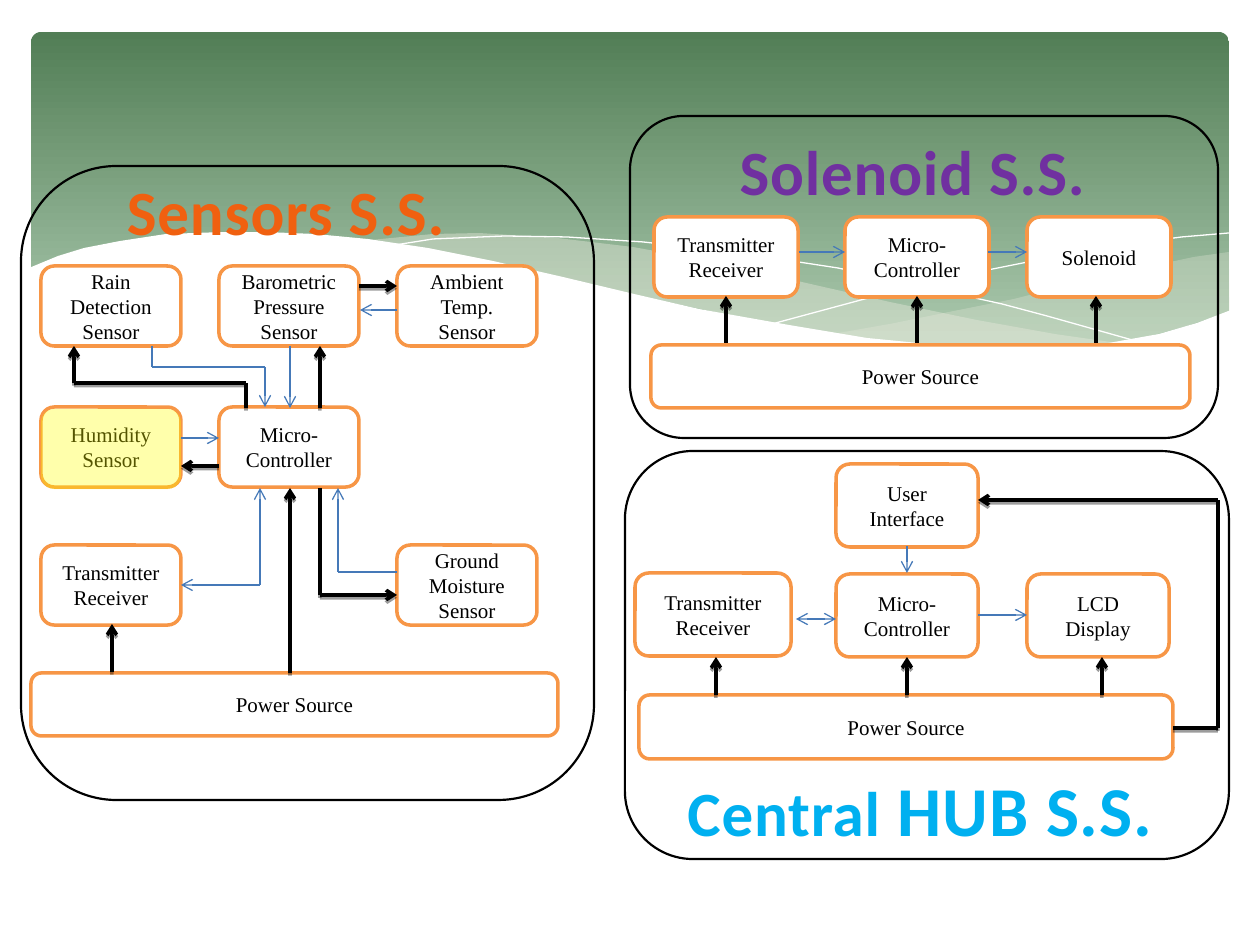
from lxml import etree
from pptx import Presentation
from pptx.dml.color import RGBColor
from pptx.enum.shapes import MSO_CONNECTOR, MSO_SHAPE
from pptx.enum.text import MSO_ANCHOR, PP_ALIGN
from pptx.oxml.ns import qn
from pptx.util import Pt

PX = 914400 / 126
ROUND = MSO_SHAPE.ROUNDED_RECTANGLE
LINE = MSO_CONNECTOR.STRAIGHT
MID = MSO_ANCHOR.MIDDLE
MID_TEXT = PP_ALIGN.CENTER
COLORS = {
    "dark": "527E56", "light": "AAC8AD", "mist": "EAEBDE", "white": "FFFFFF",
    "black": "000000", "edge": "F79646", "wire": "4579B8", "mark": "FFFF00",
    "orange": "F06010", "sky": "00B0F0", "purple": "7030A0",
}
WAVES = [
    ("mist", 29, [
        (1198, 220), (1163, 225), (1111, 236), (1054, 249), (983, 267), (918, 280),
        (859, 292), (802, 302), (840, 307), (875, 311), (923, 316), (981, 318),
        (1032, 317), (1079, 312), (1119, 304), (1156, 294), (1199, 279)]),
    ("mist", 40, [
        (1094, 312), (1024, 302), (946, 288), (859, 270), (762, 248), (705, 234),
        (651, 224), (602, 215), (526, 206), (448, 201), (402, 202), (329, 209),
        (400, 219), (478, 234), (535, 248), (637, 270), (726, 289), (807, 303),
        (879, 313), (958, 318), (1025, 318)]),
    (None, 0, [
        (358, 214), (402, 207), (474, 204), (536, 205), (612, 210), (702, 220),
        (807, 236), (885, 253), (971, 272), (1016, 284), (1112, 311)]),
    (None, 0, [
        (741, 292), (845, 264), (947, 240), (1022, 225), (1097, 212), (1151, 205),
        (1198, 201)]),
    ("white", 100, [
        (1200, 278), (1166, 291), (1128, 302), (1072, 312), (1006, 317), (928, 315),
        (836, 306), (758, 293), (668, 277), (603, 262), (532, 245), (462, 229),
        (397, 216), (337, 207), (284, 202), (235, 200), (192, 200), (135, 202),
        (89, 209), (53, 216), (27, 224), (-2, 236), (-2, 383), (1200, 383)]),
]


def rgb(name):
    """Return the named colour."""
    return RGBColor.from_string(COLORS[name])


def emu(*sizes):
    """Turn px into EMU."""
    return [round(size * PX) for size in sizes]


def paint(shape, fill=None, alpha=100, line=None, width=1):
    """Set the fill, opacity and outline of a shape."""
    shape.shadow.inherit = False
    if fill:
        shape.fill.solid()
        shape.fill.fore_color.rgb = rgb(fill)
        if alpha < 100:
            tone = shape._element.spPr.find(qn("a:solidFill"))[0]
            etree.SubElement(tone, qn("a:alpha")).set("val", str(alpha * 1000))
    else:
        shape.fill.background()
    if line:
        shape.line.color.rgb = rgb(line)
        shape.line.width = Pt(width)
    else:
        shape.line.fill.background()


def style(para, font, size, color):
    """Centre a paragraph and format its runs."""
    para.alignment = MID_TEXT
    for run in para.runs:
        run.font.name = font
        run.font.size = Pt(size)
        run.font.color.rgb = rgb(color)


def add_node(slide, box, at, text, fill="white"):
    """Add a labelled block at a place inside the box."""
    x, y, w, h = at
    node = slide.shapes.add_shape(ROUND, *emu(box[0] + x, box[1] + y, w, h))
    paint(node, fill, line="edge", width=2)
    frame = node.text_frame
    frame.text = text
    frame.word_wrap = True
    frame.vertical_anchor = MID
    style(frame.paragraphs[0], "Times New Roman", 12, "black")


def add_wire(slide, box, points, power=False, both=False):
    """Join points by straight lines that end in an arrow."""
    spots = [(box[0] + x, box[1] + y) for x, y in points]
    last = len(spots) - 2
    for i, (start, end) in enumerate(zip(spots, spots[1:])):
        wire = slide.shapes.add_connector(LINE, *emu(*start, *end))
        wire.line.color.rgb = rgb("black" if power else "wire")
        wire.line.width = Pt(2 if power else 0.75)
        props = wire._element.spPr
        ends = [("a:headEnd", both and i == 0), ("a:tailEnd", i == last)]
        for tag, shown in ends:
            if shown:
                etree.SubElement(props.find(qn("a:ln")), qn(tag)).set("type", "arrow")
        effect = etree.SubElement(props, qn("a:effectLst"))
        if power:
            shade = etree.SubElement(effect, qn("a:outerShdw"), dist="20000",
                                     dir="5400000", rotWithShape="0")
            tone = etree.SubElement(shade, qn("a:srgbClr"), val=COLORS["black"])
            etree.SubElement(tone, qn("a:alpha"), val="38000")


def add_name(slide, box, at, parts, color):
    """Add a panel name from parts of text and size."""
    x, y, w, h = at
    label = slide.shapes.add_textbox(*emu(box[0] + x, box[1] + y, w, h))
    label.text_frame.word_wrap = False
    para = label.text_frame.paragraphs[0]
    for text, _ in parts:
        para.add_run().text = text
    style(para, "Calibri", 36, color)
    for run, (_, size) in zip(para.runs, parts):
        run.font.size = Pt(size)
        run.font.bold = True
        run.font._element.set("spc", "50")


def add_frame(slide, box):
    """Outline a panel."""
    paint(slide.shapes.add_shape(ROUND, *emu(*box)), line="black", width=1.25)


def add_head(slide, box):
    """Draw the green banner and its waves."""
    band = slide.shapes.add_shape(ROUND, *emu(*box))
    paint(band)
    band.adjustments[0] = 0.03
    band.fill.gradient()
    band.fill.gradient_angle = 270
    stops = zip(band.fill.gradient_stops, ("dark", "light"), (0, 0.9))
    for stop, name, place in stops:
        stop.color.rgb = rgb(name)
        stop.position = place
    for fill, alpha, points in WAVES:
        path = slide.shapes.build_freeform(*points[0], scale=PX)
        path.add_line_segments(points[1:], close=bool(fill))
        wave = path.convert_to_shape(*emu(*box[:2]))
        paint(wave, fill, alpha, None if fill else "white", 0)


def add_sensors(slide, box):
    """Draw the sensors panel."""
    cols, rows = (20, 198, 376), (100, 241, 379)
    nodes = [
        (0, 0, "Rain Detection\vSensor"), (1, 0, "Barometric Pressure Sensor"),
        (2, 0, "Ambient Temp.\vSensor"), (0, 1, "Humidity\vSensor"),
        (1, 1, "Micro-Controller"), (0, 2, "Transmitter\vReceiver"),
        (2, 2, "Ground Moisture\vSensor")]
    for col, row, text in nodes:
        add_node(slide, box, (cols[col], rows[row], 140, 80), text)
    add_node(slide, box, (10, 507, 527, 63), "Power Source")
    feeds = [
        [(91, 506), (91, 458)], [(269, 507), (269, 322)], [(198, 300), (160, 300)],
        [(299, 242), (299, 180)], [(299, 322), (299, 429), (376, 429)],
        [(225, 242), (225, 217), (53, 217), (53, 180)], [(338, 120), (376, 120)]]
    for points in feeds:
        add_wire(slide, box, points, power=True)
    links = [
        [(131, 180), (131, 201), (244, 201), (244, 241)], [(269, 180), (269, 242)],
        [(160, 272), (198, 272)], [(376, 406), (317, 406), (317, 322)],
        [(376, 144), (339, 144)]]
    for points in links:
        add_wire(slide, box, points)
    add_wire(slide, box, [(160, 419), (239, 419), (239, 322)], both=True)
    add_name(slide, box, (91, 0, 348, 86), [("Sensors S.S.", 36)], "orange")
    add_frame(slide, box)
    mark = slide.shapes.add_shape(ROUND, *emu(box[0] + 20, box[1] + 243, 140, 80))
    paint(mark, "mark", 33)


def add_valve(slide, box):
    """Draw the solenoid panel."""
    names = ("Transmitter\vReceiver", "Micro-Controller", "Solenoid")
    for x, mid, text in zip((24, 215, 397), (96, 287, 466), names):
        add_node(slide, box, (x, 101, 144, 80), text)
        add_wire(slide, box, [(mid, 229), (mid, 180)], power=True)
    add_node(slide, box, (21, 229, 539, 63), "Power Source")
    for start, end in ((169, 215), (358, 397)):
        add_wire(slide, box, [(start, 136), (end, 136)])
    add_name(slide, box, (96, 10, 373, 86), [("Solenoid S.S.", 36)], "purple")
    add_frame(slide, box)


def add_hub(slide, box):
    """Draw the central hub panel."""
    add_node(slide, box, (14, 244, 534, 64), "Power Source", None)
    add_node(slide, box, (10, 122, 156, 83), "Transmitter\vReceiver")
    nodes = [(211, 123, "Micro-Controller"), (402, 123, "LCD Display"),
             (211, 13, "User Interface")]
    for x, y, text in nodes:
        add_node(slide, box, (x, y, 142, 83), text)
    for x in (91, 282, 477):
        add_wire(slide, box, [(x, 244), (x, 206)], power=True)
    add_wire(slide, box, [(548, 277), (593, 277), (593, 49), (353, 49)], power=True)
    add_wire(slide, box, [(171, 168), (211, 168)], both=True)
    add_wire(slide, box, [(353, 164), (402, 164)])
    add_wire(slide, box, [(282, 95), (282, 122)])
    parts = [("Central", 36), (" HUB S.S.", 40)]
    add_name(slide, box, (50, 309, 490, 93), parts, "sky")
    add_frame(slide, box)


def main():
    """Build and save the slide."""
    deck = Presentation()
    deck.slide_width, deck.slide_height = emu(1260, 945)
    slide = deck.slides.add_slide(deck.slide_layouts[6])
    add_head(slide, (31, 32, 1198, 340))
    add_sensors(slide, (21, 166, 573, 634))
    add_hub(slide, (625, 451, 604, 408))
    add_valve(slide, (630, 116, 588, 322))
    deck.save("out.pptx")


if __name__ == "__main__":
    main()
